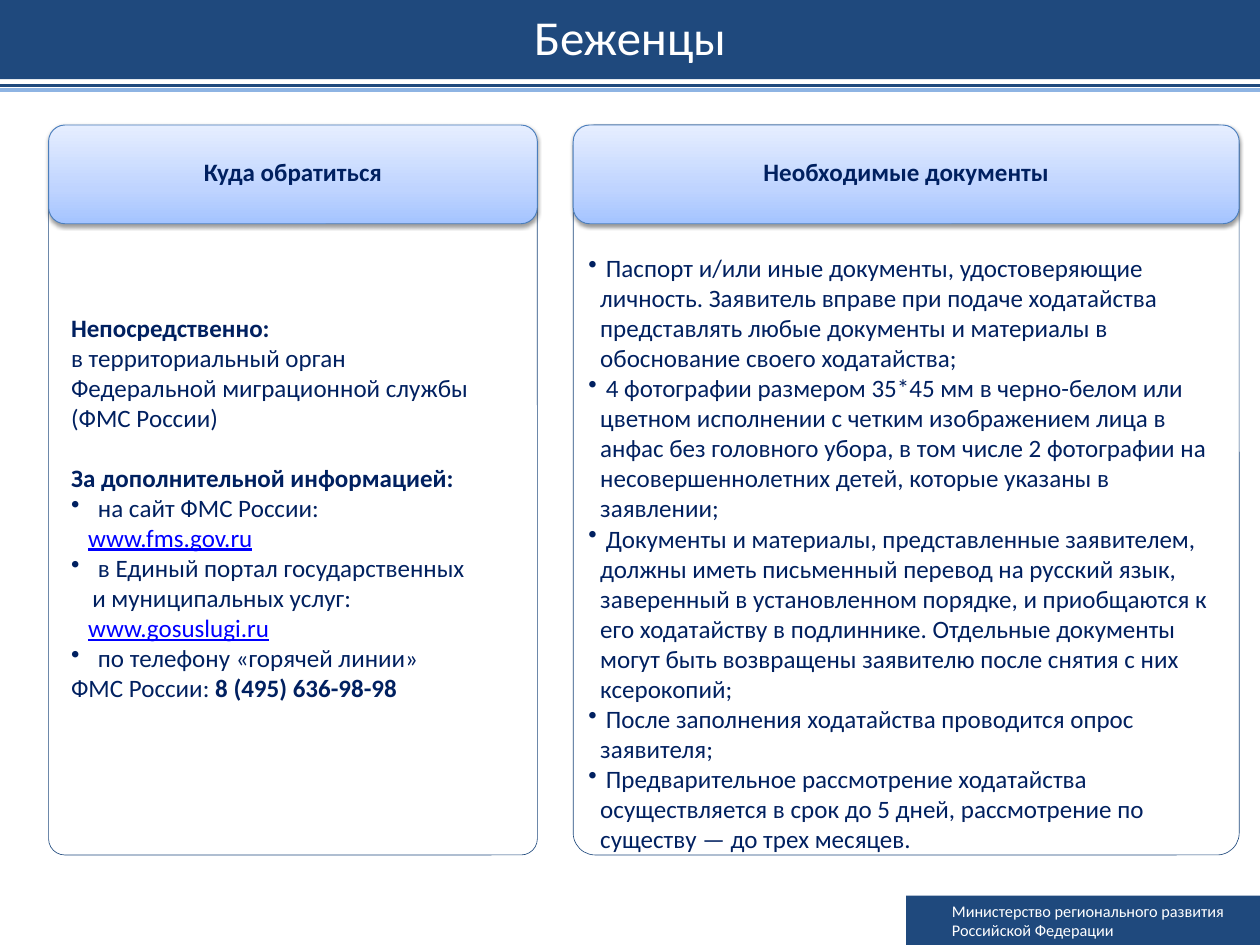
from lxml import etree
from pptx import Presentation
from pptx.dml.color import RGBColor
from pptx.enum import shapes, text
from pptx.oxml import parse_xml
from pptx.oxml.ns import qn
from pptx.util import Pt

NAVY, INK, SKY, WHITE, LINK = "1F497D", "002060", "8EB4E3", "FFFFFF", "0000FF"
A_NS = "http://schemas.openxmlformats.org/drawingml/2006/main"
SLIDE_W, SLIDE_H = 1008, 756

# Column bodies: each paragraph is (kind, space before, [(words, style), ...])
CONTACTS = [
    ("plain", 0, [("Непосредственно:", "bold")]),
    ("plain", 0, [("в территориальный орган", "")]),
    ("plain", 0, [("Федеральной миграционной службы (ФМС России)", "")]),
    ("plain", 24, [("За дополнительной информацией:", "bold")]),
    ("bullet", 0, [(" на сайт ФМС России:", "")]),
    ("link", 0, [("www.fms.gov.ru", "link")]),
    ("bullet", 0, [(" в Единый портал государственных\nи муниципальных услуг:", "")]),
    ("link", 0, [("www.gosuslugi.ru", "link")]),
    ("bullet", 0, [(" по телефону «горячей линии»", "")]),
    ("plain", 0, [("ФМС России:", ""), (" 8 (495) 636-98-98", "bold")]),
]
DOCUMENTS = [("bullet", 0, [(" " + item, "")]) for item in (
    "Паспорт и/или иные документы, удостоверяющие личность. Заявитель вправе при подаче "
    "ходатайства представлять любые документы и материалы в обоснование своего ходатайства;",
    "4 фотографии размером 35*45 мм в черно-белом или цветном исполнении с четким "
    "изображением лица в анфас без головного убора, в том числе 2 фотографии на "
    "несовершеннолетних детей, которые указаны в заявлении;",
    "Документы и материалы, представленные заявителем, должны иметь письменный перевод на "
    "русский язык, заверенный в установленном порядке, и приобщаются к его ходатайству в "
    "подлиннике. Отдельные документы могут быть возвращены заявителю после снятия с них "
    "ксерокопий;",
    "После заполнения ходатайства проводится опрос заявителя;",
    "Предварительное рассмотрение ходатайства осуществляется в срок до 5 дней, "
    "рассмотрение по существу — до трех месяцев.",
)]


def rgb(value):
    return RGBColor.from_string(value)


def place(shape, box):
    shape.left, shape.top, shape.width, shape.height = (Pt(v) for v in box)


def add_box(slide, kind, box, fill=None, line=None, width=0.5):
    shape = slide.shapes.add_shape(kind, *(Pt(v) for v in box))
    shape.shadow.inherit = False
    if fill:
        shape.fill.solid()
        shape.fill.fore_color.rgb = rgb(fill)
    else:
        shape.fill.background()
    if line:
        shape.line.color.rgb = rgb(line)
        shape.line.width = Pt(width)
    else:
        shape.line.fill.background()
    return shape


def set_frame(shape, anchor, insets):
    frame = shape.text_frame
    frame.word_wrap = True
    frame.auto_size = text.MSO_AUTO_SIZE.NONE
    frame.vertical_anchor = anchor
    (frame.margin_left, frame.margin_top,
     frame.margin_right, frame.margin_bottom) = (Pt(v) for v in insets)
    return frame


def add_words(paragraph, words, size, color, bold=False, underline=False):
    for i, part in enumerate(words.split("\n")):
        if i:
            paragraph.add_line_break()
        run = paragraph.add_run()
        run.text = part
        font = run.font
        font.name, font.size, font.bold, font.underline = "Calibri", Pt(size), bold, underline
        font.color.rgb = rgb(color)


def set_indent(paragraph, left, bullet=False):
    props = paragraph._p.get_or_add_pPr()
    props.set("marL", str(Pt(left)))
    props.set("indent", str(Pt(-left if bullet else 0)))
    if bullet:
        etree.SubElement(props, qn("a:buChar")).set("char", "•")


def add_title(slide, box):
    title = slide.shapes.title
    place(title, box)
    title.fill.solid()
    title.fill.fore_color.rgb = rgb(NAVY)
    frame = set_frame(title, text.MSO_ANCHOR.MIDDLE, (10, 5, 10, 5))
    heading = frame.paragraphs[0]
    heading.alignment = text.PP_ALIGN.CENTER
    heading.line_spacing = Pt(40.6)
    add_words(heading, "Беженцы", 39, WHITE)


def add_rule(slide, left, right, y, color):
    rule = slide.shapes.add_connector(
        shapes.MSO_CONNECTOR.STRAIGHT, Pt(left), Pt(y), Pt(right), Pt(y))
    rule.line.color.rgb = rgb(color)
    rule.line.width = Pt(3)
    etree.SubElement(rule._element.spPr, qn("a:effectLst"))


def add_column_header(slide, box, label):
    header = add_box(slide, shapes.MSO_SHAPE.ROUNDED_RECTANGLE, box, WHITE, "4B7EBC", 0.75)
    # Three-stop gradient, dark at the bottom
    header.fill.gradient()
    header.fill.gradient_angle = 90
    stops = header._element.spPr.find(".//" + qn("a:gsLst"))
    for stop in list(stops):
        stops.remove(stop)
    for percent, color in ((0, "A4C4FF"), (35, "BFD4FF"), (100, "E6EEFF")):
        stop = etree.SubElement(stops, qn("a:gs"), pos=str(percent * 1000))
        etree.SubElement(stop, qn("a:srgbClr"), val=color)
    # Soft shadow below
    effects = header._element.spPr.find(qn("a:effectLst"))
    effects.append(parse_xml(
        f'<a:outerShdw xmlns:a="{A_NS}" blurRad="{Pt(3.1)}" dist="{Pt(1.6)}" dir="5400000" '
        'rotWithShape="0"><a:srgbClr val="000000"><a:alpha val="38000"/></a:srgbClr>'
        '</a:outerShdw>'))
    frame = set_frame(header, text.MSO_ANCHOR.MIDDLE, (0, 3.6, 0, 3.6))
    caption = frame.paragraphs[0]
    caption.alignment = text.PP_ALIGN.CENTER
    caption.line_spacing = Pt(19.6)
    add_words(caption, label, 20, INK, bold=True)


def add_column(slide, box, label, body_offset, insets, hang, content):
    left, top, width, height = box
    body = add_box(slide, shapes.MSO_SHAPE.ROUNDED_RECTANGLE,
                   (left, top + body_offset, width, height - body_offset), line=NAVY)
    body.adjustments[0] = 0.033
    frame = set_frame(body, text.MSO_ANCHOR.TOP, insets)
    indents = {"plain": 0, "link": 13.6, "bullet": hang}
    for i, (kind, before, pieces) in enumerate(content):
        entry = frame.add_paragraph() if i else frame.paragraphs[0]
        set_indent(entry, indents[kind], kind == "bullet")
        entry.alignment = text.PP_ALIGN.LEFT
        entry.line_spacing = Pt(24)
        if before:
            entry.space_before = Pt(before)
        for words, style in pieces:
            is_link = style == "link"
            add_words(entry, words, 20, LINK if is_link else INK, style == "bold", is_link)
    add_column_header(slide, (left, top, width, 79), label)


def add_footer(slide, box):
    footer = add_box(slide, shapes.MSO_SHAPE.RECTANGLE, box, NAVY)
    frame = set_frame(footer, text.MSO_ANCHOR.MIDDLE, (7.2, 3.6, 7.2, 3.6))
    ministry = frame.paragraphs[0]
    ministry.alignment = text.PP_ALIGN.LEFT
    set_indent(ministry, 29.5)
    add_words(ministry, "Министерство регионального развития\nРоссийской Федерации", 13, WHITE)


def main():
    prs = Presentation()
    prs.slide_width, prs.slide_height = Pt(SLIDE_W), Pt(SLIDE_H)
    slide = prs.slides.add_slide(prs.slide_layouts[5])

    # Title band and rules
    add_title(slide, (0, 0, SLIDE_W, 63.4))
    add_rule(slide, 0, SLIDE_W, 68.4, NAVY)
    add_rule(slide, 0, SLIDE_W, 72, SKY)

    # Two columns
    add_column(slide, (458.6, 100, 532.8, 584), "Необходимые документы",
               0, (7.2, 97.2, 7.2, 0), 9.4, DOCUMENTS)
    add_column(slide, (38.9, 100, 391, 584), "Куда обратиться",
               44, (14.2, 101.9, 14, 3.6), 17, CONTACTS)

    # Ministry name
    add_footer(slide, (725, 716.4, SLIDE_W - 725, SLIDE_H - 716.4))
    prs.save("out.pptx")


if __name__ == "__main__":
    main()
